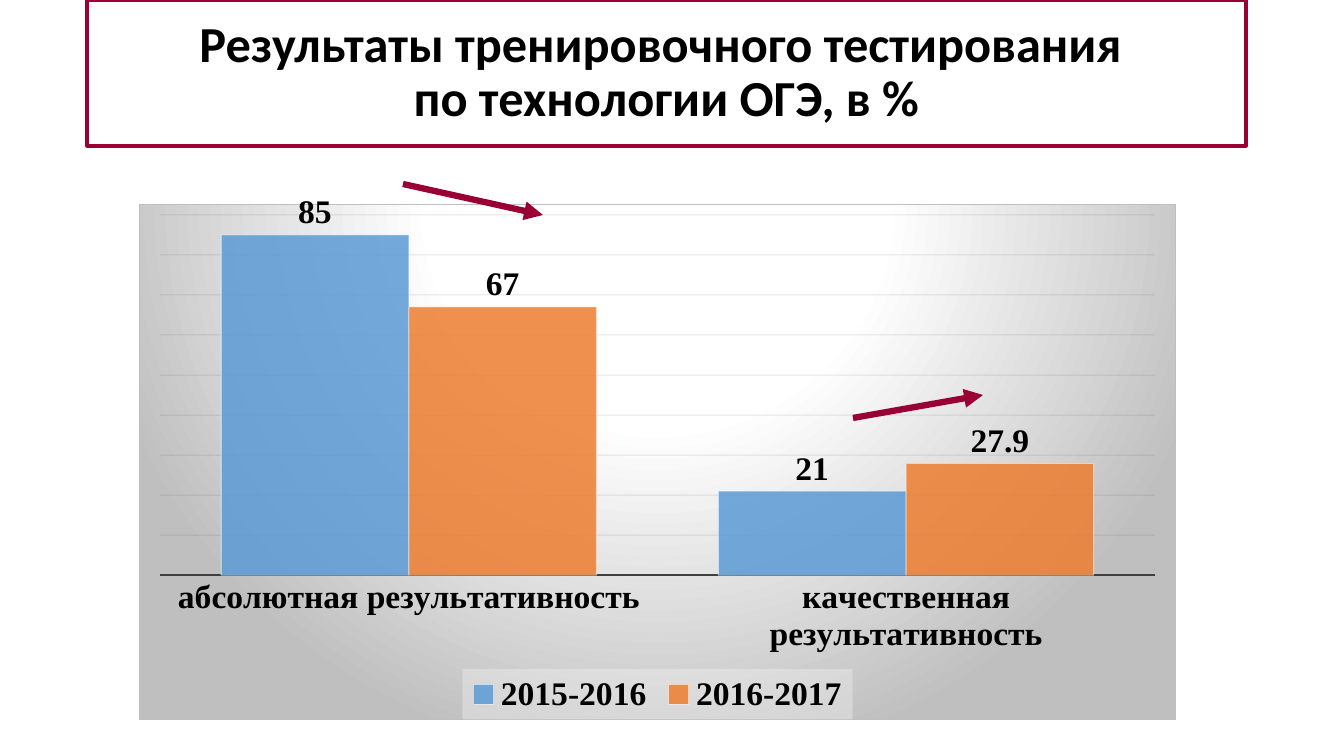
from lxml.etree import SubElement
from pptx import Presentation
from pptx.chart.data import CategoryChartData
from pptx.dml.color import RGBColor
from pptx.enum.chart import XL_CHART_TYPE, XL_LABEL_POSITION, XL_LEGEND_POSITION, XL_TICK_MARK
from pptx.enum.shapes import MSO_CONNECTOR, MSO_SHAPE
from pptx.enum.text import MSO_ANCHOR, PP_ALIGN
from pptx.oxml import parse_xml
from pptx.oxml.ns import nsdecls, qn
from pptx.util import Pt

EMU_PER_PX = 914400 / 100.8
COLORS = {
    "accent": "990033", "text": "000000", "white": "FFFFFF", "gray": "BFBFBF",
    "axis": "404040", "grid": "0D0D0D", "legend": "F2F2F2",
    "2015-2016": "5B9BD5", "2016-2017": "ED7D31",
}


def px(length):
    return round(length * EMU_PER_PX)


def color(name):
    return RGBColor.from_string(COLORS[name])


def fade(element, *percents):
    """Set the opacity of the colours inside element, in order."""
    for tint, percent in zip(list(element.iter(qn("a:srgbClr"))), percents):
        SubElement(tint, qn("a:alpha"), val=str(percent * 1000))


class SlideBuilder:
    title_font = "Calibri"
    chart_font = "Times New Roman"

    def __init__(self, page):
        self.page = page

    def style_font(self, font, name, size):
        font.name, font.size, font.bold = name, Pt(size), True
        font.color.rgb = color("text")

    def style_line(self, line, name, width):
        line.color.rgb = color(name)
        line.width = Pt(width)

    def title(self, left, top, width, height, lines):
        box = self.page.shapes.add_shape(
            MSO_SHAPE.RECTANGLE, px(left), px(top), px(width), px(height))
        box.shadow.inherit = False
        box.fill.background()
        self.style_line(box.line, "accent", 2.25)
        frame = box.text_frame
        frame.word_wrap = True
        frame.vertical_anchor = MSO_ANCHOR.MIDDLE
        para = frame.paragraphs[0]
        para.alignment = PP_ALIGN.CENTER
        para.line_spacing = 0.9
        for index, line in enumerate(lines):
            if index:
                para.add_line_break()
            span = para.add_run()
            span.text = line
            self.style_font(span.font, self.title_font, 36)

    def arrow(self, x1, y1, x2, y2):
        arrow = self.page.shapes.add_connector(
            MSO_CONNECTOR.STRAIGHT, px(x1), px(y1), px(x2), px(y2))
        self.style_line(arrow.line, "accent", 4.5)
        SubElement(arrow.line._get_or_add_ln(), qn("a:tailEnd"), type="triangle")
        SubElement(arrow._element.spPr, qn("a:effectLst"))

    def column_chart(self, left, top, width, height, categories, series):
        data = CategoryChartData()
        data.categories = categories
        for name, values in series.items():
            data.add_series(name, values)
        chart = self.page.shapes.add_chart(
            XL_CHART_TYPE.COLUMN_CLUSTERED,
            px(left), px(top), px(width), px(height), data).chart
        chart.has_title = False
        self.style_font(chart.font, self.chart_font, 24)
        self.style_columns(chart.plots[0])
        self.style_axes(chart)
        self.style_legend(chart)
        self.style_background(chart)

    def style_columns(self, plot):
        plot.gap_width, plot.overlap = 65, 0
        plot.vary_by_categories = False
        for columns in plot.series:
            columns.format.fill.solid()
            columns.format.fill.fore_color.rgb = color(columns.name)
            self.style_line(columns.format.line, "white", 0.75)
            fade(columns._element.find(qn("c:spPr")), 85, 50)
            labels = columns.data_labels
            labels.show_value = True
            labels.position = XL_LABEL_POSITION.OUTSIDE_END
            self.style_font(labels.font, self.chart_font, 24)

    def style_axes(self, chart):
        category_axis, value_axis = chart.category_axis, chart.value_axis
        category_axis.major_tick_mark = XL_TICK_MARK.NONE
        self.style_line(category_axis.format.line, "axis", 1.5)
        self.style_font(category_axis.tick_labels.font, self.chart_font, 24)
        value_axis.visible = False
        value_axis.minimum_scale, value_axis.maximum_scale = 0, 90
        value_axis.major_unit = 10
        self.style_line(value_axis.major_gridlines.format.line, "grid", 0.75)
        fade(value_axis._element.find(qn("c:majorGridlines")), 10)

    def style_legend(self, chart):
        chart.has_legend = True
        legend = chart.legend
        legend.position = XL_LEGEND_POSITION.BOTTOM
        legend.include_in_layout = False
        self.style_font(legend.font, self.chart_font, 24)
        panel = parse_xml(
            f'<c:spPr {nsdecls("c", "a")}><a:solidFill>'
            f'<a:srgbClr val="{COLORS["legend"]}"/></a:solidFill></c:spPr>')
        fade(panel, 39)
        legend._element.find(qn("c:txPr")).addprevious(panel)

    def style_background(self, chart):
        stops = "".join(
            f'<a:gs pos="{place * 1000}"><a:srgbClr val="{COLORS[name]}"/></a:gs>'
            for place, name in ((0, "white"), (39, "white"), (100, "gray")))
        chart_part = chart._chartSpace.find(qn("c:chart"))
        chart_part.addnext(parse_xml(
            f'<c:spPr {nsdecls("c", "a")}><a:gradFill><a:gsLst>{stops}</a:gsLst>'
            '<a:path path="circle">'
            '<a:fillToRect l="50000" t="-80000" r="50000" b="180000"/></a:path>'
            f'</a:gradFill><a:ln w="{Pt(0.75)}"><a:solidFill>'
            f'<a:srgbClr val="{COLORS["gray"]}"/></a:solidFill></a:ln></c:spPr>'))
        # Fixed plot area, as shares of the chart
        plot_area = chart_part.find(qn("c:plotArea"))
        for layout in plot_area.findall(qn("c:layout")):
            plot_area.remove(layout)
        places = "".join(
            f'<c:{key} val="{value}"/>' for key, value in (
                ("layoutTarget", "inner"), ("xMode", "edge"), ("yMode", "edge"),
                ("x", 0.02), ("y", 0.02), ("w", 0.96), ("h", 0.7)))
        plot_area.insert(0, parse_xml(
            f'<c:layout {nsdecls("c")}><c:manualLayout>{places}'
            '</c:manualLayout></c:layout>'))


def main():
    deck = Presentation()
    deck.slide_width, deck.slide_height = px(1344), px(756)
    builder = SlideBuilder(deck.slides.add_slide(deck.slide_layouts[6]))

    # Heading
    builder.title(87, 0, 1159, 146, [
        "Результаты тренировочного тестирования ",
        "по технологии ОГЭ, в %"])

    # Results by school year
    builder.column_chart(
        139, 194, 1037, 526,
        ["абсолютная результативность", "качественная результативность"],
        {"2015-2016": (85, 21), "2016-2017": (67, 27.9)})

    # Trend arrows
    builder.arrow(403, 184, 543, 215)
    builder.arrow(853, 418, 983, 395)

    deck.save("out.pptx")


if __name__ == "__main__":
    main()
